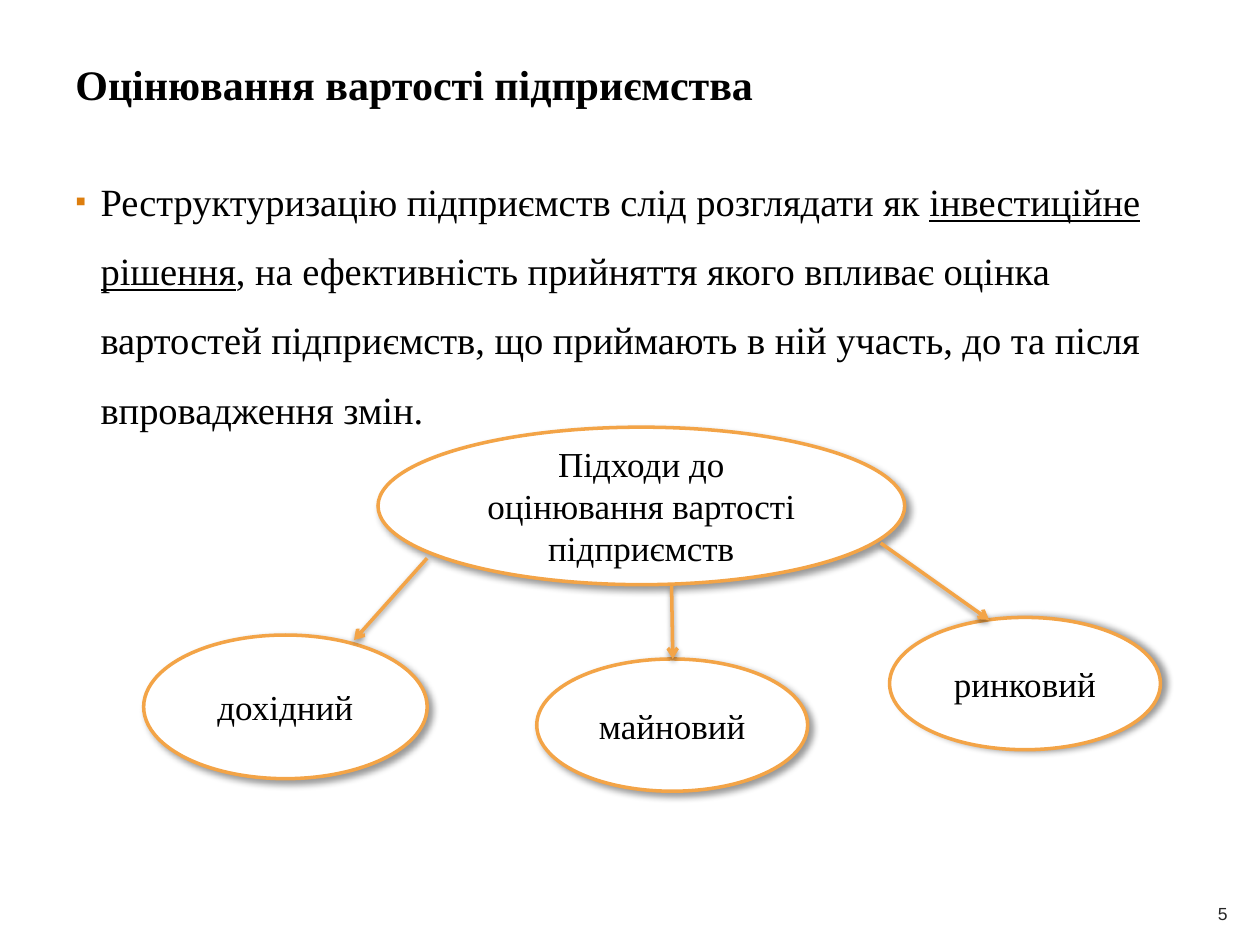
"""Build a slide on the approaches to valuing an enterprise."""
from lxml import etree
from pptx import Presentation
from pptx.dml.color import RGBColor
from pptx.enum import shapes, text
from pptx.oxml import ns
from pptx.util import Inches, Pt

BLACK = RGBColor(0, 0, 0)
WHITE = RGBColor(255, 255, 255)
GREY = RGBColor(0x26, 0x26, 0x26)
AMBER = RGBColor(0xF3, 0xA4, 0x47)
ALIGN = text.PP_ALIGN
MID = text.MSO_ANCHOR.MIDDLE
SERIF = "Times New Roman"


def shade(host, spot, alpha, blur, dist, angle):
    root = etree.Element(ns.qn("a:effectLst"))
    drop = etree.SubElement(root, ns.qn("a:outerShdw"), blurRad=str(Pt(blur)),
                            dist=str(Pt(dist)), dir=str(angle * 60000),
                            algn="tl", rotWithShape="0")
    tint = etree.SubElement(drop, ns.qn("a:srgbClr"), val=str(BLACK))
    etree.SubElement(tint, ns.qn("a:alpha"), val=str(alpha * 1000))
    host.insert(spot, root)


def write(shape, words, size, align, anchor, **looks):
    frame = shape.text_frame
    frame.word_wrap = True
    frame.vertical_anchor = anchor
    para = frame.paragraphs[0]
    para.alignment = align
    for word in words:
        run = para.add_run()
        run.text = word
        run.font.color.rgb = looks.get("color", BLACK)
        for key, val in {"name": looks.get("name", SERIF), "size": Pt(size),
                         "bold": looks.get("bold", False)}.items():
            setattr(run.font, key, val)
    return para


deck = Presentation()
deck.slide_width, deck.slide_height = Inches(10), Inches(7.5)
slide = deck.slides.add_slide(deck.slide_layouts[6])
items = slide.shapes

title = items.add_textbox(Inches(0.5), Inches(0.18), Inches(9.25), Inches(0.97))
para = write(title, ["Оцінювання вартості підприємства"], 24, ALIGN.LEFT, MID,
             bold=True)
shade(para.runs[0].font._element, 1, 40, 4, 3, 45)

body = items.add_textbox(Inches(0.5), Inches(1.18), Inches(9.25), Inches(5.52))
para = write(body, [
    "Реструктуризацію підприємств слід розглядати як ",
    "інвестиційне рішення",
    ", на ефективність прийняття якого впливає оцінка вартостей підприємств, "
    "що приймають в ній участь, до та після впровадження змін.",
], 22, ALIGN.LEFT, text.MSO_ANCHOR.TOP)
para.runs[1].font.underline = True
para.line_spacing = 1.5
props = para._p.get_or_add_pPr()
props.set("marL", str(Inches(0.2)))
props.set("indent", str(-Inches(0.2)))
tint = etree.SubElement(props, ns.qn("a:buClr"))
etree.SubElement(tint, ns.qn("a:srgbClr"), val="DD7E0E")
for tag, key, val in [("a:buSzPct", "val", "80000"),
                      ("a:buFont", "typeface", "Arial"),
                      ("a:buChar", "char", "▪")]:
    etree.SubElement(props, ns.qn(tag)).set(key, val)

page = items.add_textbox(Inches(9.45), Inches(7.05), Inches(0.51), Inches(0.4))
write(page, ["5"], 10, ALIGN.CENTER, MID, name="Arial", color=GREY)

for words, left, top, width, height, angle in [
    ("Підходи до оцінювання вартості підприємств", 3, 3.39, 4.18, 1.25, 45),
    ("дохідний", 1.14, 5.04, 2.25, 1.14, 45),
    ("майновий", 4.26, 5.23, 2.15, 1.05, 45),
    ("ринковий", 7.06, 4.9, 2.15, 1.05, 0),
]:
    oval = items.add_shape(shapes.MSO_SHAPE.OVAL, Inches(left), Inches(top),
                           Inches(width), Inches(height))
    oval.fill.solid()
    oval.fill.fore_color.rgb = WHITE
    oval.line.color.rgb = AMBER
    oval.line.width = Pt(2)
    shade(oval._element.spPr, len(oval._element.spPr), 40, 4, 3, angle)
    write(oval, [words], 20, ALIGN.CENTER, MID)

for ends in [(3.39, 4.43, 2.81, 5.08), (5.33, 4.65, 5.34, 5.23),
             (6.99, 4.31, 7.85, 4.92)]:
    arrow = items.add_connector(shapes.MSO_CONNECTOR.STRAIGHT, *map(Inches, ends))
    arrow.line.color.rgb = AMBER
    arrow.line.width = Pt(2)
    etree.SubElement(arrow.line._get_or_add_ln(), ns.qn("a:tailEnd"), type="arrow")
    shade(arrow._element.spPr, len(arrow._element.spPr), 38, 3.1, 1.6, 90)

deck.save("out.pptx")
